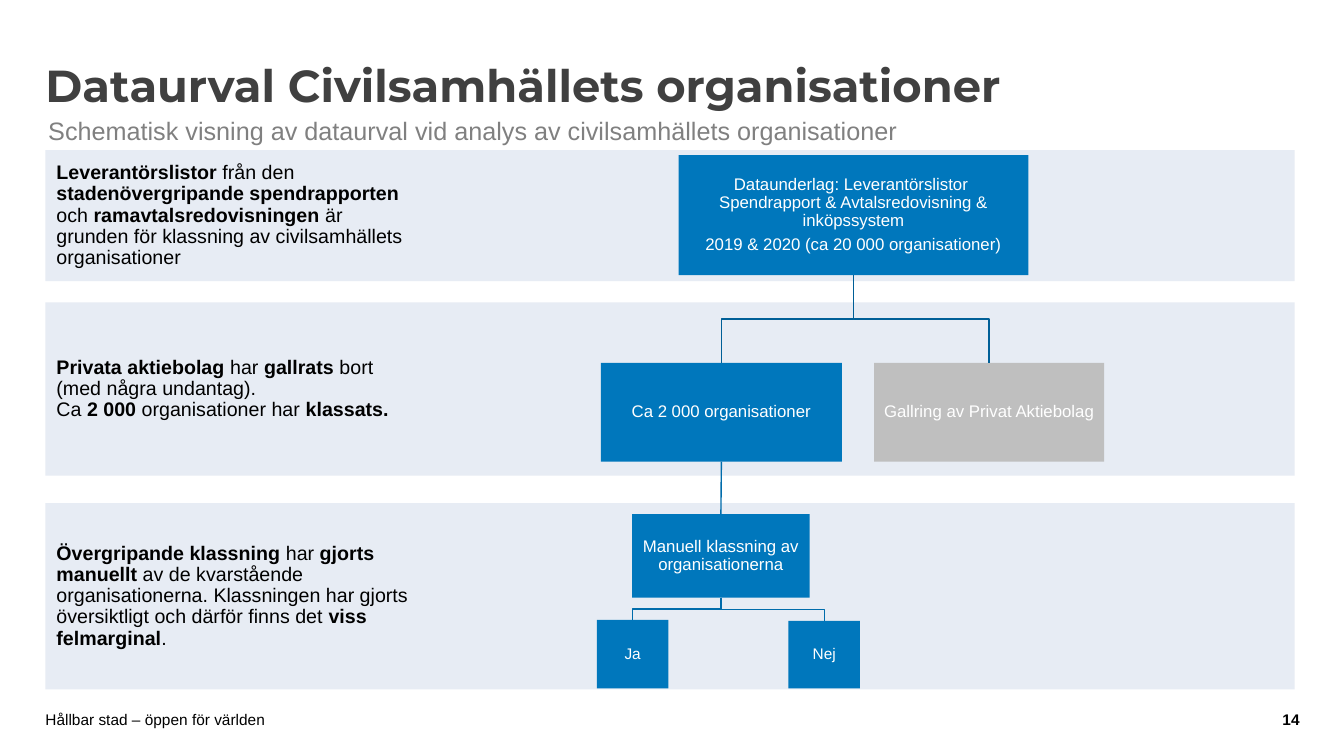
from pptx import Presentation
from pptx.dml.color import RGBColor
from pptx.enum.shapes import MSO_CONNECTOR, MSO_SHAPE
from pptx.enum.text import MSO_ANCHOR, MSO_AUTO_SIZE, PP_ALIGN
from pptx.oxml.ns import qn
from pptx.util import Inches, Pt

COLORS = {
    "title": "404040", "sub": "808080", "text": "000000", "white": "FFFFFF",
    "band": "E7ECF4", "blue": "0077BC", "gray": "BFBFBF",
    "dark": "005F97", "mid": "006CAB",
}
LEFT, WIDE = 0.45, 12.39
NOTE = 3.72  # width of the note column inside a band


def color(name):
    return RGBColor.from_string(COLORS[name])


def style(para, size, tint, bold=False, align=PP_ALIGN.LEFT, face="Arial"):
    para.alignment = align
    font = para.font
    font.name, font.size, font.bold = face, Pt(size), bold
    font.color.rgb = color(tint)


def inset(frame, left, top, right, bottom):
    frame.margin_left, frame.margin_top = Inches(left), Inches(top)
    frame.margin_right, frame.margin_bottom = Inches(right), Inches(bottom)
    frame.vertical_anchor = MSO_ANCHOR.MIDDLE
    frame.word_wrap = True


def add_rect(slide, box, fill):
    rect = slide.shapes.add_shape(MSO_SHAPE.RECTANGLE, *map(Inches, box))
    rect.shadow.inherit = False
    rect.fill.solid()
    rect.fill.fore_color.rgb = color(fill)
    rect.line.fill.background()
    return rect


def tighten(para, size):
    para.line_spacing = 0.9
    para.space_after = Pt(size * 0.35)


def add_label(slide, box, text, margins, size, tint, **look):
    frame = slide.shapes.add_textbox(*map(Inches, box)).text_frame
    inset(frame, *margins)
    frame.text = text
    style(frame.paragraphs[0], size, tint, **look)


def add_title(slide, box, text):
    title = slide.shapes.title
    title.left, title.top, title.width, title.height = map(Inches, box)
    frame = title.text_frame
    frame.text = text
    frame.auto_size = MSO_AUTO_SIZE.NONE
    inset(frame, 0, 0.05, 0, 0.05)
    para = frame.paragraphs[0]
    para.line_spacing = 0.9
    style(para, 32, "title", bold=True, face="Montserrat")


def add_band(slide, top, height, note):
    """Pale band with a note at its left; ** switches bold on and off."""
    frame = add_rect(slide, (LEFT, top, WIDE, height), "band").text_frame
    inset(frame, 0.11, 0.11, WIDE - NOTE + 0.11, 0.11)
    para = frame.paragraphs[0]
    tighten(para, 14)
    style(para, 14, "text")
    for i, part in enumerate(note.split("**")):
        for j, line in enumerate(part.split("\n")):
            if j:
                para.add_line_break()
            if line:
                run = para.add_run()
                run.text = line
                if i % 2:
                    run.font.bold = True


def add_node(slide, box, lines, size=12, fill="blue"):
    node = add_rect(slide, box, fill)
    frame = node.text_frame
    inset(frame, 0.05, 0.05, 0.05, 0.05)
    for i, line in enumerate(lines):
        para = frame.add_paragraph() if i else frame.paragraphs[0]
        para.text = line
        tighten(para, size)
        style(para, size, "white", align=PP_ALIGN.CENTER)
    return node


def add_elbow(slide, upper, lower, tint):
    """Bent line from the bottom of one node to the top of another."""
    x1, y1 = upper.left + upper.width // 2, upper.top + upper.height
    x2, y2 = lower.left + lower.width // 2, lower.top
    half = (y1 + y2) // 2
    pen = slide.shapes.build_freeform(x1, y1)
    pen.add_line_segments([(x1, half), (x2, half), (x2, y2)], close=False)
    elbow = pen.convert_to_shape()
    elbow.shadow.inherit = False
    elbow.fill.background()
    elbow.line.color.rgb = color(tint)
    elbow.line.width = Pt(1)


def add_drop(slide, upper, lower, tint):
    """Straight line between two stacked nodes."""
    drop = slide.shapes.add_connector(MSO_CONNECTOR.STRAIGHT, 0, 0, 0, 0)
    drop.begin_connect(upper, 2)
    drop.end_connect(lower, 0)
    drop.line.color.rgb = color(tint)
    drop.line.width = Pt(1)
    props = drop.element.spPr
    props.append(props.makeelement(qn("a:effectLst"), {}))


def add_tree(slide, left, top):
    def node(x, y, width, height, *lines, **look):
        return add_node(slide, (left + x, top + y, width, height), lines, **look)

    source = node(0.81, 0, 3.47, 1.19,
                  "Dataunderlag: Leverantörslistor \vSpendrapport & Avtalsredovisning & inköpssystem",
                  "2019 & 2020 (ca 20 000 organisationer)")
    kept = node(0.04, 2.06, 2.39, 0.98, "Ca 2 000 organisationer")
    cut = node(2.75, 2.06, 2.28, 0.98, "Gallring av Privat Aktiebolag", fill="gray")
    manual = node(0.35, 3.56, 1.76, 0.83, "Manuell klassning av organisationerna")
    yes = node(0, 4.61, 0.71, 0.68, "Ja", size=11)
    no = node(1.9, 4.62, 0.71, 0.67, "Nej", size=11)

    # Branches
    for child in (kept, cut):
        add_elbow(slide, source, child, "dark")
    add_drop(slide, kept, manual, "mid")
    for child in (yes, no):
        add_elbow(slide, manual, child, "mid")


def add_footer(slide, top):
    flat = (0, 0, 0, 0)
    add_label(slide, (LEFT, top, 9.45, 0.16), "Hållbar stad – öppen för världen",
              flat, 11, "text")
    add_label(slide, (12.25, top, 0.64, 0.16), "14", flat, 11, "text",
              bold=True, align=PP_ALIGN.RIGHT)


def main():
    deck = Presentation()
    deck.slide_width, deck.slide_height = Inches(13.33), Inches(7.5)
    slide = deck.slides.add_slide(deck.slide_layouts[5])

    # Heading
    add_title(slide, (LEFT, 0.44, 10.03, 0.87), "Dataurval Civilsamhällets organisationer")
    add_label(slide, (0.38, 1.09, 9.19, 0.4),
              "Schematisk visning av dataurval vid analys av civilsamhällets organisationer",
              (0.1, 0.05, 0.1, 0.05), 18, "sub")

    # Bands with notes
    add_band(slide, 1.49, 1.3,
             "**Leverantörslistor** från den **stadenövergripande spendrapporten **och "
             "**ramavtalsredovisningen** är grunden för klassning av civilsamhällets "
             "organisationer")
    add_band(slide, 3, 1.72,
             "**Privata aktiebolag **har **gallrats** bort (med några undantag). \n"
             "Ca **2 000 **organisationer har **klassats.**")
    add_band(slide, 4.99, 1.85,
             "**Övergripande klassning **har **gjorts manuellt **av de kvarstående "
             "organisationerna. Klassningen har gjorts översiktligt och därför finns det "
             "**viss felmarginal**.")

    # Selection tree and footer
    add_tree(slide, 5.92, 1.54)
    add_footer(slide, 7.06)
    deck.save("out.pptx")


if __name__ == "__main__":
    main()
